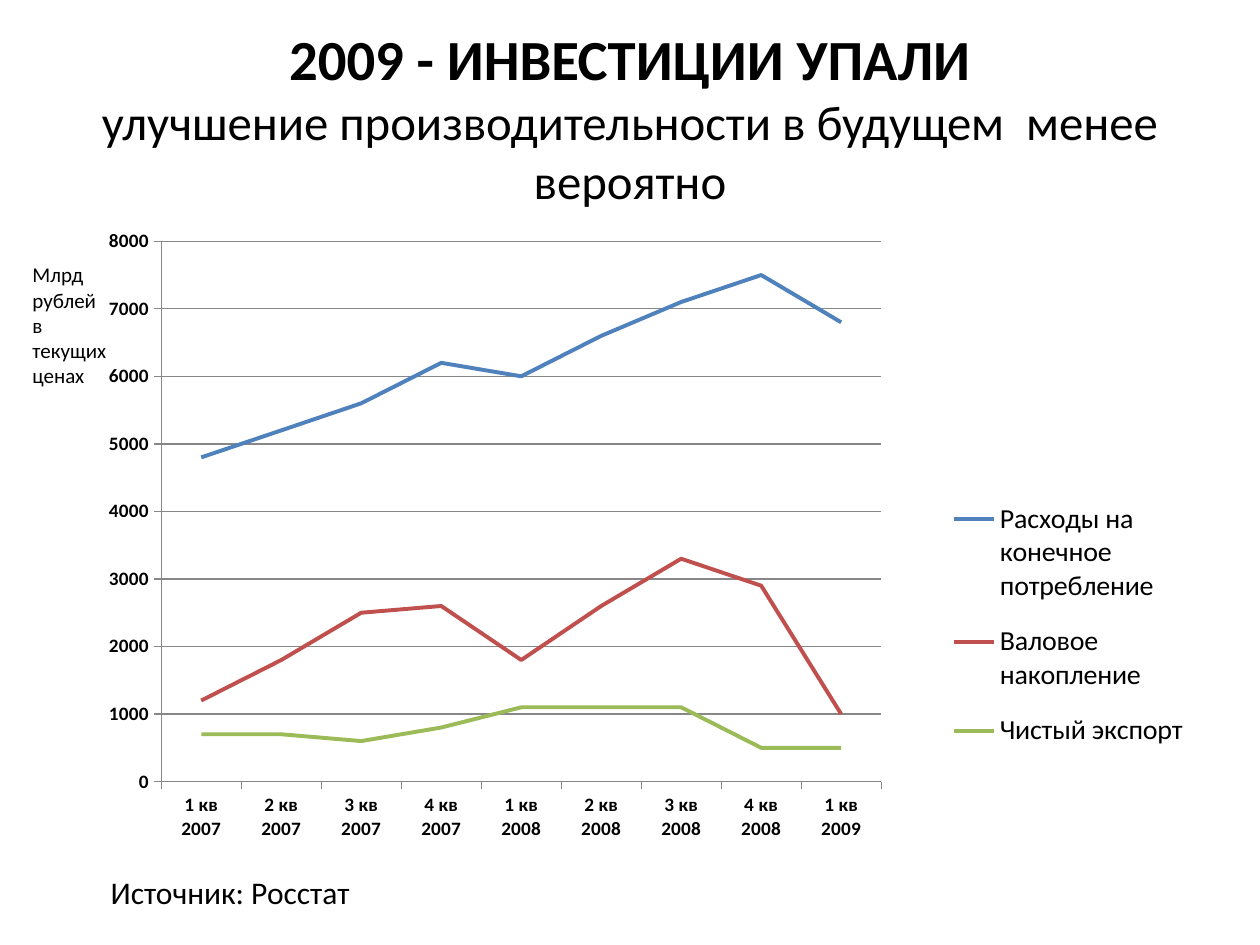
from lxml import etree
from pptx import Presentation
from pptx.chart.data import CategoryChartData
from pptx.dml.color import RGBColor
from pptx.enum import chart as charts, text
from pptx.oxml.ns import qn
from pptx.util import Pt

THEME = {
    "font": "Calibri",
    "ink": RGBColor(0, 0, 0),
    "grid": RGBColor(0x87, 0x87, 0x87),
    "heading": 32.4, "subheading": 27.9,
    "source": 18, "legend": 16, "unit": 12, "axis": 11, "chart": 10,
}

HEADING = "2009 - ИНВЕСТИЦИИ УПАЛИ"
SUBHEADING = "улучшение производительности в будущем  менее вероятно"
SOURCE = "Источник: Росстат"
UNIT = "Млрд рублей\nв текущих ценах"
QUARTERS = [f"{i % 4 + 1} кв {2007 + i // 4}" for i in range(9)]
SERIES = [
    ("Расходы на конечное потребление", "4F81BD",
     (4800, 5200, 5600, 6200, 6000, 6600, 7100, 7500, 6800)),
    ("Валовое накопление", "C0504D",
     (1200, 1800, 2500, 2600, 1800, 2600, 3300, 2900, 1000)),
    ("Чистый экспорт", "9BBB59",
     (700, 700, 600, 800, 1100, 1100, 1100, 500, 500)),
]

# left, top, width, height in points
TITLE_BOX = (36, 21.6, 648, 90)
CHART_BOX = (33.84, 123.84, 648, 356.4)
SOURCE_BOX = (56.16, 495.36, 158.4, 28.8)
UNIT_BOX = (11.52, 146.16, 61.92, 79.92)
# the same, as shares of the chart
PLOT_AREA = (0.09, 0.04, 0.635, 0.88)
LEGEND_AREA = (0.78, 0.43, 0.22, 0.47)


def style(font, size, bold=False):
    font.name = THEME["font"]
    font.size = Pt(THEME[size])
    font.bold = bold
    font.color.rgb = THEME["ink"]


def add_label(slide, box, content, size, wrap):
    frame = slide.shapes.add_textbox(*map(Pt, box)).text_frame
    frame.word_wrap = wrap
    frame.auto_size = text.MSO_AUTO_SIZE.SHAPE_TO_FIT_TEXT
    frame.text = content
    for paragraph in frame.paragraphs:
        for run in paragraph.runs:
            style(run.font, size)


def set_layout(part, area, inner=False):
    """Fix the place of a plot area or legend by hand."""
    layout = part.find(qn("c:layout"))
    if layout is None:
        layout = etree.Element(qn("c:layout"))
        position = part.find(qn("c:legendPos"))
        part.insert(0 if position is None else part.index(position) + 1, layout)
    manual = etree.SubElement(layout, qn("c:manualLayout"))
    settings = [("layoutTarget", "inner")] if inner else []
    settings += [("xMode", "edge"), ("yMode", "edge")]
    settings += zip("xywh", area)
    for tag, value in settings:
        etree.SubElement(manual, qn(f"c:{tag}")).set("val", str(value))


def add_title(slide):
    title = slide.shapes.title
    title.left, title.top, title.width, title.height = map(Pt, TITLE_BOX)
    frame = title.text_frame
    frame.word_wrap = True
    frame.auto_size = text.MSO_AUTO_SIZE.NONE
    frame.vertical_anchor = text.MSO_ANCHOR.MIDDLE
    paragraph = frame.paragraphs[0]
    paragraph.text = f"{HEADING}\v{SUBHEADING}"
    paragraph.alignment = text.PP_ALIGN.CENTER
    heading, subheading = paragraph.runs
    style(heading.font, "heading", bold=True)
    style(subheading.font, "subheading")


def add_spending_chart(slide):
    data = CategoryChartData(number_format="General")
    data.categories = QUARTERS
    for name, _, values in SERIES:
        data.add_series(name, values)
    chart = slide.shapes.add_chart(
        charts.XL_CHART_TYPE.LINE, *map(Pt, CHART_BOX), data).chart
    chart.has_title = False
    style(chart.font, "chart")

    plot = chart.plots[0]
    plot.vary_by_categories = False
    for series, (_, color, _) in zip(plot.series, SERIES):
        series.smooth = False
        series.marker.style = charts.XL_MARKER_STYLE.NONE
        series.format.line.width = Pt(2.25)
        series.format.line.color.rgb = RGBColor.from_string(color)

    amounts = chart.value_axis
    for axis in (chart.category_axis, amounts):
        style(axis.tick_labels.font, "axis", bold=True)
        axis.major_tick_mark = charts.XL_TICK_MARK.OUTSIDE
        axis.format.line.color.rgb = THEME["grid"]
    amounts.minimum_scale, amounts.maximum_scale = 0, 8000
    amounts.major_unit = 1000
    amounts.has_major_gridlines = True
    amounts.major_gridlines.format.line.color.rgb = THEME["grid"]

    chart.has_legend = True
    legend = chart.legend
    legend.position = charts.XL_LEGEND_POSITION.RIGHT
    legend.include_in_layout = False
    style(legend.font, "legend")

    chart_xml = chart.element.find(qn("c:chart"))
    set_layout(chart_xml.find(qn("c:plotArea")), PLOT_AREA, inner=True)
    set_layout(chart_xml.find(qn("c:legend")), LEGEND_AREA)


def main():
    deck = Presentation()
    deck.slide_width, deck.slide_height = Pt(720), Pt(540)
    slide = deck.slides.add_slide(deck.slide_layouts.get_by_name("Title Only"))
    add_title(slide)
    add_spending_chart(slide)
    add_label(slide, SOURCE_BOX, SOURCE, "source", wrap=False)
    add_label(slide, UNIT_BOX, UNIT, "unit", wrap=True)
    deck.save("out.pptx")


if __name__ == "__main__":
    main()
